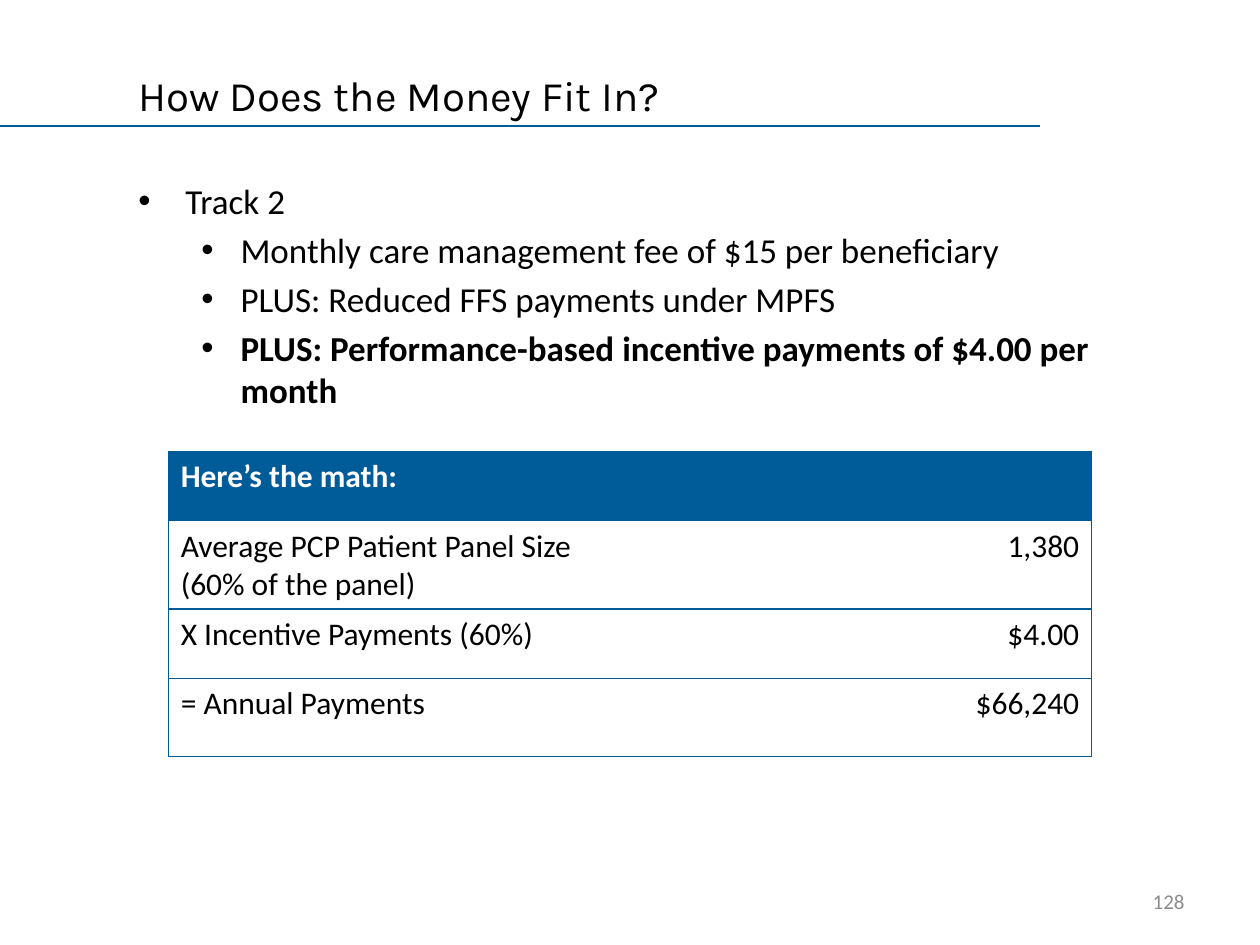
from dataclasses import dataclass

from lxml import etree
from pptx import Presentation
from pptx.dml.color import RGBColor
from pptx.enum import shapes, text
from pptx.oxml.ns import qn
from pptx.util import Cm, Pt


@dataclass(frozen=True)
class Theme:
    blue: str = "005B99"
    border: str = "005996"
    black: str = "000000"
    white: str = "FFFFFF"
    grey: str = "8C8C8C"
    heading: str = "Karla"
    body: str = "Calibri"
    title_size: int = 24
    bullet_size: int = 20
    table_size: int = 18
    number_size: int = 12
    line: float = 0.75


@dataclass(frozen=True)
class Bullet:
    words: str
    level: int = 0
    bold: bool = False


@dataclass(frozen=True)
class MathRow:
    label: str
    value: str
    height: float


THEME = Theme()
INDENTS = [(0.95, 0.95), (2.06, 0.79)]  # left margin and hanging part, by level

BULLETS = [
    Bullet("Track 2"),
    Bullet("Monthly care management fee of $15 per beneficiary", 1),
    Bullet("PLUS: Reduced FFS payments under MPFS", 1),
    Bullet("PLUS: Performance-based incentive payments of $4.00 per month", 1, True),
]
MATH = [
    MathRow("Here’s the math:", "", 1.4),
    MathRow("Average PCP Patient Panel Size (60% of the panel)", "1,380", 1.4),
    MathRow("X Incentive Payments (60%)", "$4.00", 1.4),
    MathRow("= Annual Payments", "$66,240", 1.58),
]


def style(para, size: int, color: str = THEME.black, face: str = THEME.body,
          bold: bool = False) -> None:
    para.font.size = Pt(size)
    para.font.name = face
    para.font.bold = bold
    para.font.color.rgb = RGBColor.from_string(color)


def add_box(page, left: float, top: float, width: float, height: float,
            anchor=text.MSO_ANCHOR.MIDDLE):
    """Add a wrapping text box, measured in centimetres, and return its frame."""
    box = page.shapes.add_textbox(Cm(left), Cm(top), Cm(width), Cm(height))
    frame = box.text_frame
    frame.word_wrap = True
    frame.vertical_anchor = anchor
    return frame


def add_title(page) -> None:
    rule = page.shapes.add_connector(
        shapes.MSO_CONNECTOR.STRAIGHT, Cm(0), Cm(2.54), Cm(20.96), Cm(2.54))
    rule.line.color.rgb = RGBColor.from_string(THEME.blue)
    rule.line.width = Pt(THEME.line)
    etree.SubElement(rule._element.spPr, qn("a:effectLst"))
    para = add_box(page, 2.54, 1.27, 17.78, 1.27).paragraphs[0]
    para.text = "How Does the Money Fit In?"
    style(para, THEME.title_size, face=THEME.heading)


def add_bullets(page, bullets: list[Bullet]) -> None:
    frame = add_box(page, 2.54, 3.5, 20.27, 12.57, text.MSO_ANCHOR.TOP)
    for index, bullet in enumerate(bullets):
        para = frame.add_paragraph() if index else frame.paragraphs[0]
        para.text = bullet.words
        para.level = bullet.level
        margin, hanging = INDENTS[bullet.level]
        props = para._p.get_or_add_pPr()
        props.set("marL", str(Cm(margin)))
        props.set("indent", str(-Cm(hanging)))
        etree.SubElement(props, qn("a:buFont"), typeface="Arial")
        etree.SubElement(props, qn("a:buChar"), char="•")
        if index:
            para.space_before = Pt(THEME.bullet_size * 0.2)
        style(para, THEME.bullet_size, bold=bullet.bold)


def set_borders(cell, visible: str) -> None:
    """Draw the sides named in visible (from L, R, T, B) and clear the others."""
    props = cell._tc.get_or_add_tcPr()
    for side in "LRTB":
        line = etree.SubElement(props, qn(f"a:ln{side}"), w=str(Pt(THEME.line)))
        if side in visible:
            fill = etree.SubElement(line, qn("a:solidFill"))
            etree.SubElement(fill, qn("a:srgbClr"), val=THEME.border)
        else:
            etree.SubElement(line, qn("a:noFill"))


def add_math_table(page, rows: list[MathRow]) -> None:
    total = sum(row.height for row in rows)
    table = page.shapes.add_table(
        len(rows), 2, Cm(3.39), Cm(9.1), Cm(18.62), Cm(total)).table
    table.first_row = table.horz_banding = False
    for index, row in enumerate(rows):
        table.rows[index].height = Cm(row.height)
        header = index == 0
        for column, words in enumerate((row.label, row.value)):
            cell = table.cell(index, column)
            set_borders(cell, "TB" + "LR"[column])
            if header:
                cell.fill.solid()
                cell.fill.fore_color.rgb = RGBColor.from_string(THEME.blue)
            else:
                cell.fill.background()
            para = cell.text_frame.paragraphs[0]
            if words:
                para.text = words
            if column:
                para.alignment = text.PP_ALIGN.RIGHT
            style(para, THEME.table_size,
                  THEME.white if header else THEME.black, bold=header)


def add_page_number(page, number: str) -> None:
    para = add_box(page, 18.21, 17.65, 5.92, 1.02).paragraphs[0]
    para.text = number
    para.alignment = text.PP_ALIGN.RIGHT
    style(para, THEME.number_size, THEME.grey)


def main() -> None:
    deck = Presentation()
    deck.slide_width, deck.slide_height = Cm(25.4), Cm(19.05)
    page = deck.slides.add_slide(deck.slide_layouts[6])
    add_title(page)
    add_bullets(page, BULLETS)
    add_math_table(page, MATH)
    add_page_number(page, "128")
    deck.save("out.pptx")


if __name__ == "__main__":
    main()
